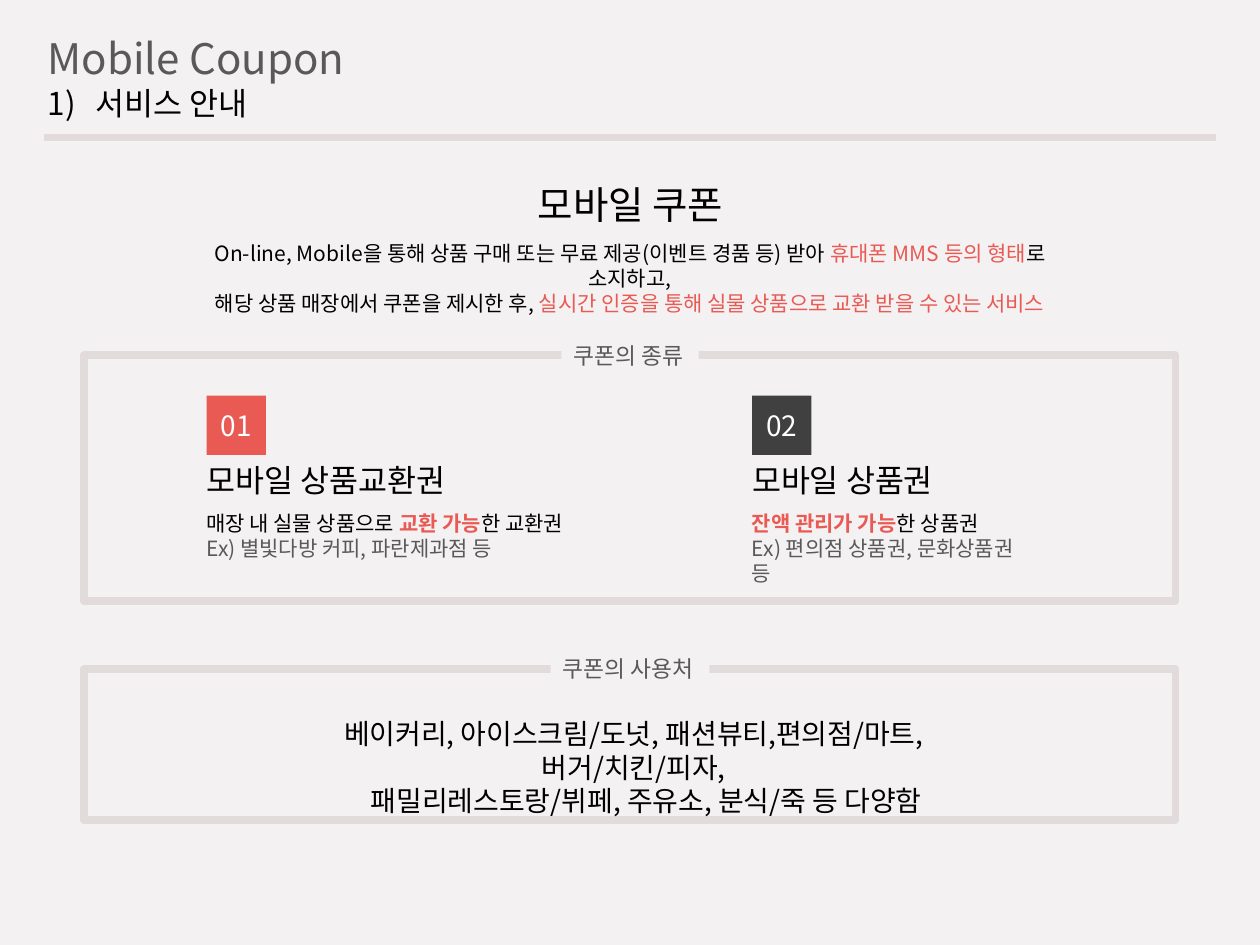
from pptx import Presentation
from pptx.dml.color import RGBColor
from pptx.enum.shapes import MSO_CONNECTOR as CONN, MSO_SHAPE as SHAPE
from pptx.enum.text import MSO_ANCHOR as ANCHOR, MSO_AUTO_SIZE as AUTO, PP_ALIGN as ALIGN
from pptx.oxml.ns import qn
from pptx.util import Inches, Pt
from lxml import etree

FONT = "Noto Sans CJK KR"
COLORS = {
    "bg": "F3F1F1", "frame": "E1DBDB", "black": "000000", "gray": "595959",
    "red": "E95A55", "dark": "404040", "white": "FFFFFF",
}

TITLE = [[("Mobile Coupon", "gray")]]
SECTION = [[("서비스 안내", "black")]]
HEADING = [[("모바일 쿠폰", "black")]]
INTRO = [
    [("On-line, Mobile을 통해 상품 구매 또는 무료 제공(이벤트 경품 등) 받아 ", "black"),
     ("휴대폰 MMS 등의 형태", "red"), ("로 소지하고,", "black")],
    [("해당 상품 매장에서 쿠폰을 제시한 후, ", "black"),
     ("실시간 인증을 통해 실물 상품으로 교환 받을 수 있는 서비스", "red")],
]
PANELS = [
    ("쿠폰의 종류", 2.82, 1.95, 1.09),
    ("쿠폰의 사용처", 5.31, 1.2, 1.26),
]
CARDS = [
    {"left": 1.54, "width": 3.13, "fill": "red", "no": "01", "name": "모바일 상품교환권",
     "body": [[("매장 내 실물 상품으로 ", "black"), ("교환 가능", "red", True), ("한 교환권", "black")],
              [("Ex) 별빛다방 커피, 파란제과점 등", "gray")]]},
    {"left": 5.87, "width": 2.4, "fill": "dark", "no": "02", "name": "모바일 상품권",
     "body": [[("잔액 관리가 가능", "red", True), ("한 상품권", "black")],
              [("Ex) 편의점 상품권, 문화상품권 등", "gray")]]},
]
PLACES = [
    [("베이커리, 아이스크림/도넛, 패션뷰티,편의점/마트, 버거/치킨/피자,", "black")],
    [("패밀리레스토랑/뷔페, 주유소, 분식/죽 등 다양함", "black")],
]


def rgb(name):
    return RGBColor.from_string(COLORS[name])


def write(s, paragraphs, size, align=ALIGN.LEFT, **frame):
    tf = s.text_frame
    for key, value in {"word_wrap": False, "auto_size": AUTO.NONE,
                       "vertical_anchor": ANCHOR.TOP, **frame}.items():
        setattr(tf, key, value)
    for i, runs in enumerate(paragraphs):
        p = tf.paragraphs[0] if i == 0 else tf.add_paragraph()
        layout = {"alignment": align, "line_spacing": Pt(size * 1.2),
                  "space_before": Pt(0), "space_after": Pt(0)}
        for key, value in layout.items():
            setattr(p, key, value)
        for text, color, *bold in runs:
            r = p.add_run()
            r.text = text
            for key, value in {"name": FONT, "size": Pt(size), "bold": bool(bold)}.items():
                setattr(r.font, key, value)
            r.font.color.rgb = rgb(color)
            etree.SubElement(r.font._element, qn("a:ea"), typeface=FONT)
    return tf


def add_text(slide, box, *args, **kwargs):
    return write(slide.shapes.add_textbox(*map(Inches, box)), *args, **kwargs)


def add_rect(slide, box, fill, line=None):
    s = slide.shapes.add_shape(SHAPE.RECTANGLE, *map(Inches, box))
    s.shadow.inherit = False
    s.fill.solid()
    s.fill.fore_color.rgb = rgb(fill)
    if line:
        s.line.color.rgb = rgb(line)
        s.line.width = Pt(4.5)
    else:
        s.line.fill.background()
    return s


def place(s, box):
    for key, value in zip(("left", "top", "width", "height"), box):
        setattr(s, key, Inches(value))
    return s


def add_header(slide):
    title, body = slide.placeholders
    write(place(title, (0.28, 0.21, 3.23, 0.5)), TITLE, 24)
    tf = write(place(body, (0.28, 0.62, 1.93, 0.4)), SECTION, 18)
    pPr = tf.paragraphs[0]._p.get_or_add_pPr()
    pPr.set("marL", str(Inches(0.38)))
    pPr.set("indent", str(-Inches(0.38)))
    etree.SubElement(pPr, qn("a:buFont"), typeface="+mj-lt")
    etree.SubElement(pPr, qn("a:buAutoNum"), type="arabicParenR")
    rule = slide.shapes.add_connector(CONN.STRAIGHT, *map(Inches, (9.65, 1.09, 0.35, 1.09)))
    rule.line.color.rgb = rgb("frame")
    rule.line.width = Pt(3.75)
    etree.SubElement(rule._element.spPr, qn("a:effectLst"))


def add_panel(slide, label, top, height, width):
    add_rect(slide, (0.67, top, 8.66, height), "bg", "frame")
    tag = add_rect(slide, (5 - width / 2, top - 0.16, width, 0.32), "bg")
    write(tag, [[(label, "gray")]], 13)


def add_card(slide, card):
    left = card["left"]
    badge = add_rect(slide, (left + 0.1, 3.14, 0.47, 0.47), card["fill"])
    write(badge, [[(card["no"], "white")]], 16, ALIGN.CENTER, vertical_anchor=ANCHOR.MIDDLE,
          margin_left=0, margin_right=0)
    add_text(slide, (left, 3.61, 2.12, 0.4), [[(card["name"], "black")]], 18)
    add_text(slide, (left, 4, card["width"], 0.5), card["body"], 12, word_wrap=True)


def main():
    """Build the mobile coupon service slide."""
    prs = Presentation()
    prs.slide_width, prs.slide_height = Inches(10), Inches(7.5)
    slide = prs.slides.add_slide(prs.slide_layouts[1])
    slide.background.fill.solid()
    slide.background.fill.fore_color.rgb = rgb("bg")
    add_header(slide)
    add_text(slide, (4.15, 1.39, 1.71, 0.47), HEADING, 22, ALIGN.CENTER)
    add_text(slide, (1.3, 1.86, 7.4, 0.5), INTRO, 12, ALIGN.CENTER, word_wrap=True)
    for panel in PANELS:
        add_panel(slide, *panel)
    for card in CARDS:
        add_card(slide, card)
    tf = add_text(slide, (1.93, 5.64, 6.2, 0.64), PLACES, 16, ALIGN.CENTER, word_wrap=True)
    tf.paragraphs[1]._p.get_or_add_pPr().set("marL", str(Inches(0.2)))
    prs.save("out.pptx")


if __name__ == "__main__":
    main()
